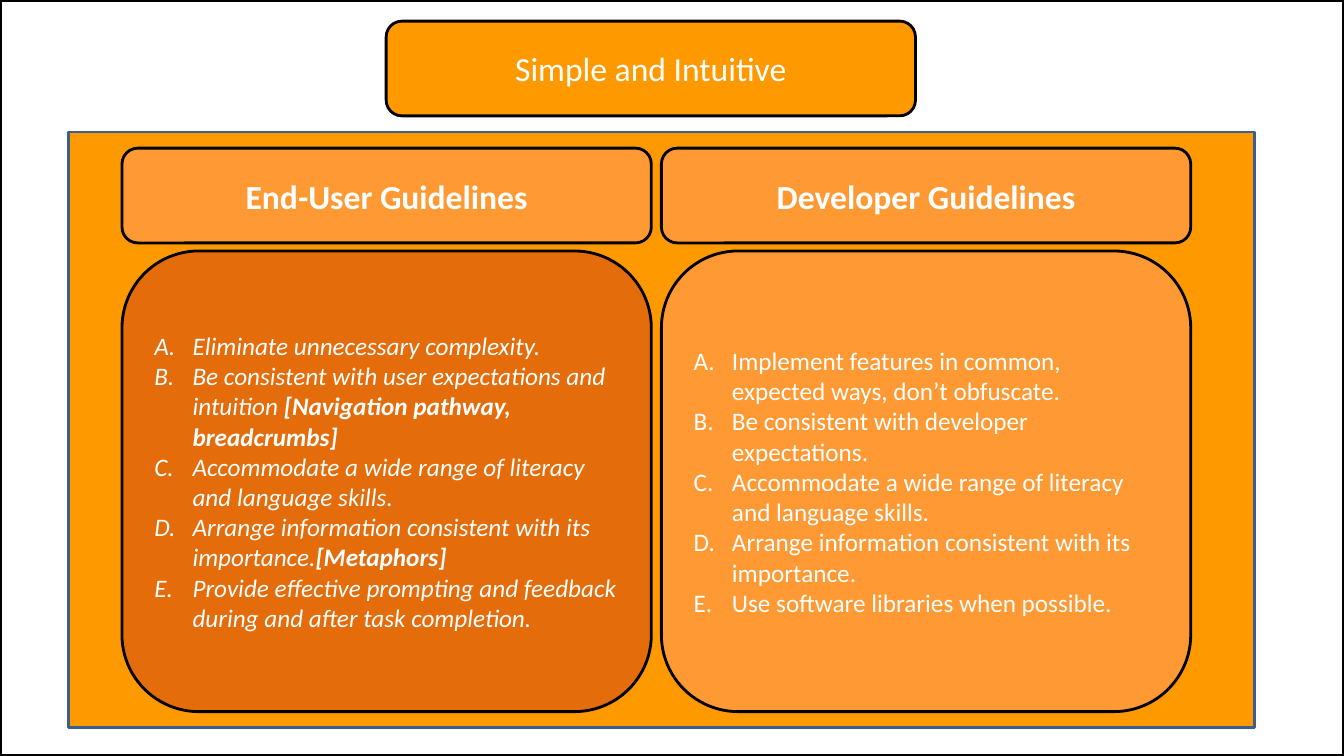
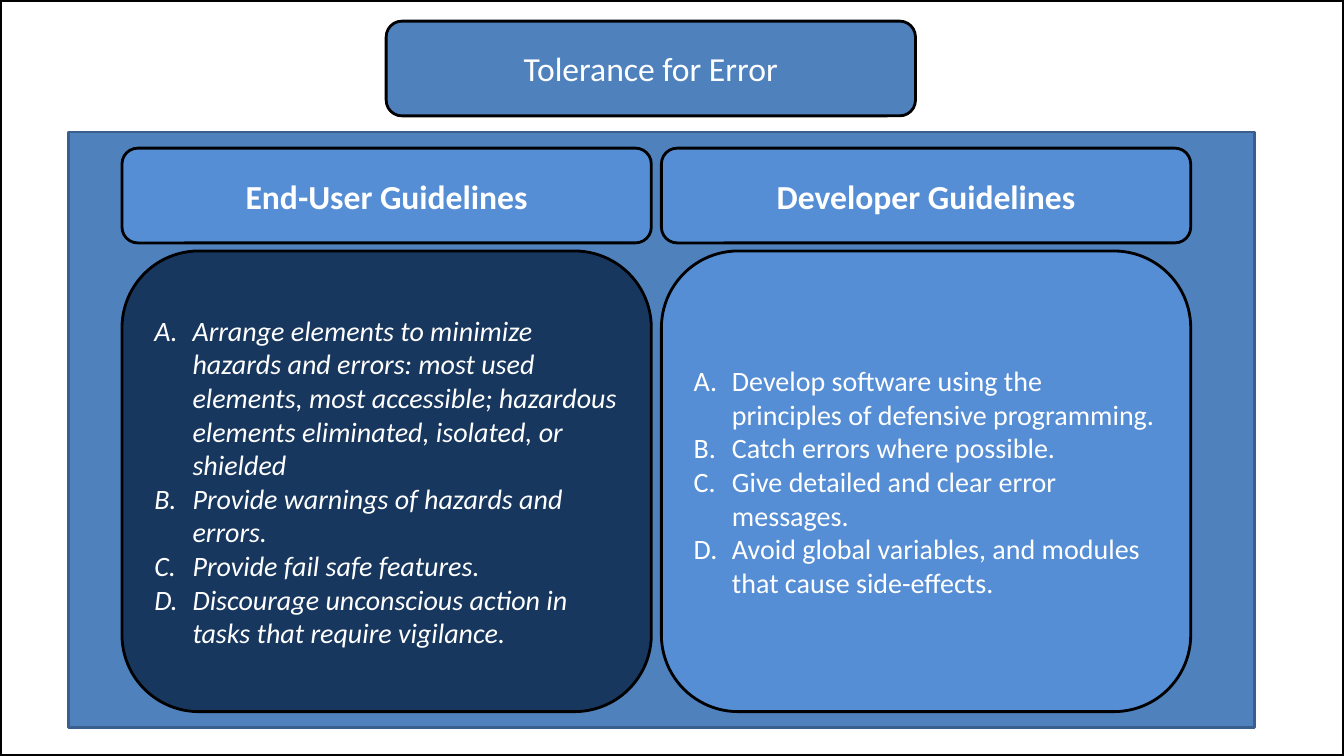
"""Builds two slides that set end-user guidelines beside developer guidelines."""
from lxml import etree
from pptx import Presentation
from pptx.dml.color import RGBColor
from pptx.enum import shapes, text
from pptx.oxml import ns
from pptx.util import Inches, Pt

FONT = "Calibri"
COLORS = {"text": "FFFFFF", "outline": "000000", "panel_edge": "3A5F8C"}
SLIDE_W, SLIDE_H = 13.33, 7.5
CARD_W, HEADER_H, LIST_H = 5.25, 0.94, 4.57
TITLE_BOX = (3.83, 0.21, CARD_W, HEADER_H)
PANEL_BOX = (0.68, 1.31, 11.76, 5.91)
FIRST_LEFT, COLUMN_STEP = 1.21, 5.35
HEADER_TOP, LIST_TOP = 1.47, 2.49
LIST_INSET, INDENT = 0.22, 0.38
COMPARISON_LAYOUT = 4
HEADERS = ("End-User Guidelines", "Developer Guidelines")

TOPICS = [
    {
        "title": "Simple and Intuitive",
        "base": "FF9900", "header": "FF9933", "lists": ("E46C0A", "FF9933"),
        "size": 18,
        "guidelines": (
            ["Eliminate unnecessary complexity.",
             "Be consistent with user expectations and intuition "
             "[Navigation pathway, breadcrumbs]",
             "Accommodate a wide range of literacy and language skills.",
             "Arrange information consistent with its importance.[Metaphors]",
             "Provide effective prompting and feedback during and after task completion."],
            ["Implement features in common, expected ways, don’t obfuscate.",
             "Be consistent with developer expectations.",
             "Accommodate a wide range of literacy and language skills.",
             "Arrange information consistent with its importance.",
             "Use software libraries when possible."],
        ),
    },
    {
        "title": "Tolerance for Error",
        "base": "4F81BD", "header": "558ED5", "lists": ("17375E", "558ED5"),
        "size": 20,
        "guidelines": (
            ["Arrange elements to minimize hazards and errors: most used elements, "
             "most accessible; hazardous elements eliminated, isolated, or shielded",
             "Provide warnings of hazards and errors.",
             "Provide fail safe features.",
             "Discourage unconscious action in tasks that require vigilance."],
            ["Develop software using the principles of defensive programming.",
             "Catch errors where possible.",
             "Give detailed and clear error messages.",
             "Avoid global variables, and modules that cause side-effects."],
        ),
    },
]


def add_box(slide, kind, box, fill=None, edge=COLORS["outline"], width=2):
    """Draw an outlined preset shape, left hollow when no fill is given."""
    shape = slide.shapes.add_shape(kind, *map(Inches, box))
    shape.shadow.inherit = False
    if fill:
        shape.fill.solid()
        shape.fill.fore_color.rgb = RGBColor.from_string(fill)
    else:
        shape.fill.background()
    shape.line.color.rgb = RGBColor.from_string(edge)
    shape.line.width = Pt(width)


def place(placeholder, box):
    """Bring a placeholder to the front, position it and return its text frame."""
    placeholder.element.getparent().append(placeholder.element)
    placeholder.left, placeholder.top, placeholder.width, placeholder.height = map(Inches, box)
    frame = placeholder.text_frame
    frame.word_wrap = True
    frame.auto_size = text.MSO_AUTO_SIZE.NONE
    frame.vertical_anchor = text.MSO_ANCHOR.MIDDLE
    return frame


def style(paragraph, size, bold=False, italic=False):
    """Set the font of a whole paragraph."""
    font = paragraph.font
    font.name, font.size = FONT, Pt(size)
    font.bold, font.italic = bold, italic
    font.color.rgb = RGBColor.from_string(COLORS["text"])


def add_heading(slide, placeholder, heading, box, fill, bold):
    """Draw a rounded card with a centred heading."""
    add_box(slide, shapes.MSO_SHAPE.ROUNDED_RECTANGLE, box, fill)
    paragraph = place(placeholder, box).paragraphs[0]
    paragraph.add_run().text = heading
    paragraph.alignment = text.PP_ALIGN.CENTER
    paragraph.space_before = Pt(0)
    style(paragraph, 24, bold=bold)


def letter(paragraph):
    """Number a paragraph A., B., C. with a hanging indent."""
    properties = paragraph._p.get_or_add_pPr()
    properties.set("marL", str(Inches(INDENT)))
    properties.set("indent", str(-Inches(INDENT)))
    etree.SubElement(properties, ns.qn("a:buFont"), typeface="+mj-lt")
    etree.SubElement(properties, ns.qn("a:buAutoNum"), type="alphaUcPeriod")


def add_guidelines(slide, placeholder, guidelines, box, fill, size, italic):
    """Draw a rounded card with a lettered list whose bracketed hints are bold."""
    add_box(slide, shapes.MSO_SHAPE.ROUNDED_RECTANGLE, box, fill)
    left, top, width, height = box
    frame = place(placeholder, (left + LIST_INSET, top + LIST_INSET,
                                width - 2 * LIST_INSET, height - 2 * LIST_INSET))
    for number, guideline in enumerate(guidelines):
        paragraph = frame.add_paragraph() if number else frame.paragraphs[0]
        paragraph.alignment = text.PP_ALIGN.LEFT
        paragraph.space_before = Pt(0)
        letter(paragraph)
        style(paragraph, size, italic=italic)
        statement, bracket, hint = guideline.partition("[")
        paragraph.add_run().text = statement
        if bracket:
            example = paragraph.add_run()
            example.text = bracket + hint
            example.font.bold = True


def add_topic(deck, topic):
    """Add one slide with a title and two columns of guidelines."""
    slide = deck.slides.add_slide(deck.slide_layouts[COMPARISON_LAYOUT])
    title, *column_holders = slide.placeholders
    add_box(slide, shapes.MSO_SHAPE.RECTANGLE, PANEL_BOX, topic["base"], COLORS["panel_edge"])
    for column, header in enumerate(HEADERS):
        left = FIRST_LEFT + column * COLUMN_STEP
        header_holder, list_holder = column_holders[2 * column:2 * column + 2]
        add_heading(slide, header_holder, header,
                    (left, HEADER_TOP, CARD_W, HEADER_H), topic["header"], bold=True)
        add_guidelines(slide, list_holder, topic["guidelines"][column],
                       (left, LIST_TOP, CARD_W, LIST_H), topic["lists"][column],
                       topic["size"], italic=column == 0)
    add_heading(slide, title, topic["title"], TITLE_BOX, topic["base"], bold=False)
    add_box(slide, shapes.MSO_SHAPE.RECTANGLE, (0, 0, SLIDE_W, SLIDE_H), width=3)


def main():
    """Build and save the presentation."""
    deck = Presentation()
    deck.slide_width, deck.slide_height = Inches(SLIDE_W), Inches(SLIDE_H)
    for topic in TOPICS:
        add_topic(deck, topic)
    deck.save("out.pptx")


if __name__ == "__main__":
    main()
